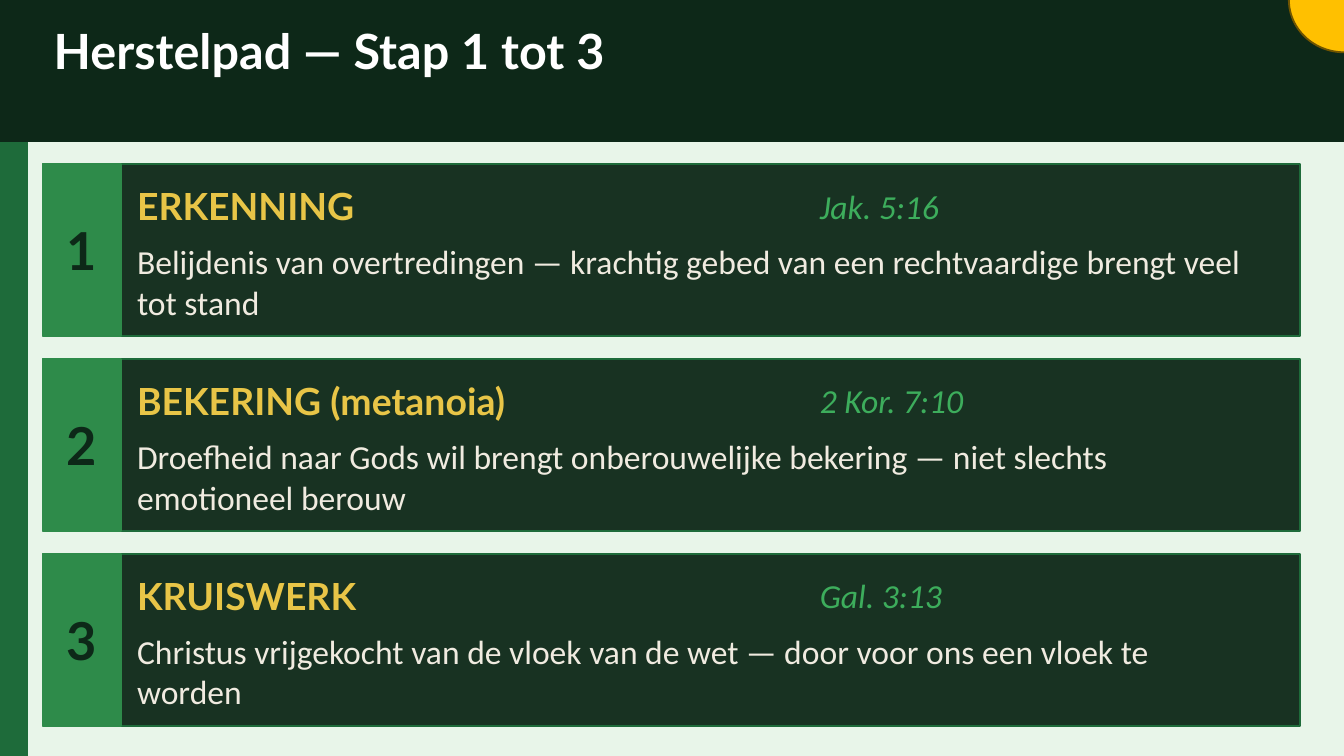
"""Build the slide with steps 1 to 3 of the recovery path."""
from dataclasses import dataclass

from lxml import etree
from pptx import Presentation
from pptx.dml.color import RGBColor
from pptx.enum.shapes import MSO_SHAPE
from pptx.enum.text import MSO_ANCHOR, PP_ALIGN
from pptx.oxml.ns import qn
from pptx.shapes.autoshape import Shape
from pptx.slide import Slide
from pptx.util import Inches, Pt

RECTANGLE = MSO_SHAPE.RECTANGLE
OVAL = MSO_SHAPE.OVAL
MIDDLE = MSO_ANCHOR.MIDDLE
LEFT = PP_ALIGN.LEFT
CENTER = PP_ALIGN.CENTER

MINT = RGBColor(0xE8, 0xF5, 0xE9)
FOREST = RGBColor(0x0D, 0x28, 0x18)
GREEN = RGBColor(0x1E, 0x6B, 0x3A)
BADGE_GREEN = RGBColor(0x2E, 0x8B, 0x4A)
VERSE_GREEN = RGBColor(0x3D, 0xAD, 0x5C)
GOLD = RGBColor(0xE8, 0xC5, 0x47)
CREAM = RGBColor(0xF0, 0xEB, 0xE0)
WHITE = RGBColor(0xFF, 0xFF, 0xFF)
AMBER = RGBColor(0xFF, 0xC0, 0x00)
BROWN = RGBColor(0x70, 0x54, 0x00)

SLIDE_WIDTH = 10
SLIDE_HEIGHT = SLIDE_WIDTH * 9 / 16
CARD_LEFT = 0.32
CARD_TOP = 1.22
CARD_WIDTH = 9.35
CARD_HEIGHT = 1.28
CARD_PITCH = 1.45
BADGE_WIDTH = 0.58
TEXT_LEFT = 1.02


@dataclass(frozen=True)
class Box:
    """Position and size in inches."""

    left: float
    top: float
    width: float
    height: float


@dataclass(frozen=True)
class TextStyle:
    """Look of a single-run text."""

    font: str
    size: int
    color: RGBColor
    bold: bool = False
    italic: bool = False
    alignment: PP_ALIGN = LEFT


@dataclass(frozen=True)
class Step:
    """One step of the recovery path."""

    title: str
    verse: str
    description: str


TITLE_STYLE = TextStyle("Lato", 26, WHITE, bold=True)
NUMBER_STYLE = TextStyle("Lato", 28, FOREST, bold=True, alignment=CENTER)
STEP_STYLE = TextStyle("Lato", 20, GOLD, bold=True)
VERSE_STYLE = TextStyle("Calibri", 18, VERSE_GREEN, italic=True)
DESCRIPTION_STYLE = TextStyle("Calibri", 18, CREAM)

STEPS = (
    Step(
        "ERKENNING",
        "Jak. 5:16",
        "Belijdenis van overtredingen — krachtig gebed van een rechtvaardige brengt veel tot stand",
    ),
    Step(
        "BEKERING (metanoia)",
        "2 Kor. 7:10",
        "Droefheid naar Gods wil brengt onberouwelijke bekering — niet slechts emotioneel berouw",
    ),
    Step(
        "KRUISWERK",
        "Gal. 3:13",
        "Christus vrijgekocht van de vloek van de wet — door voor ons een vloek te worden",
    ),
)


def add_panel(
    slide: Slide, box: Box, fill: RGBColor, line: RGBColor, kind: MSO_SHAPE = RECTANGLE
) -> Shape:
    """Draw a filled shape with a thin outline."""
    shape = slide.shapes.add_shape(
        kind, Inches(box.left), Inches(box.top), Inches(box.width), Inches(box.height)
    )
    shape.shadow.inherit = False
    shape.fill.solid()
    shape.fill.fore_color.rgb = fill
    shape.line.color.rgb = line
    shape.line.width = Pt(1)
    return shape


def set_opacity(shape: Shape, percent: int) -> None:
    """Make the solid fill of a shape partly transparent."""
    color = shape.fill._xPr.find(qn("a:solidFill")).find(qn("a:srgbClr"))
    etree.SubElement(color, qn("a:alpha")).set("val", str(percent * 1000))


def add_text(slide: Slide, box: Box, text: str, style: TextStyle) -> None:
    """Place a text without margins, centred vertically in its box."""
    shape = slide.shapes.add_textbox(
        Inches(box.left), Inches(box.top), Inches(box.width), Inches(box.height)
    )
    frame = shape.text_frame
    frame.word_wrap = True
    frame.vertical_anchor = MIDDLE
    frame.margin_left = frame.margin_right = Inches(0)
    frame.margin_top = frame.margin_bottom = Inches(0)
    paragraph = frame.paragraphs[0]
    paragraph.alignment = style.alignment
    run = paragraph.add_run()
    run.text = text
    run.font.name = style.font
    run.font.size = Pt(style.size)
    run.font.color.rgb = style.color
    run.font.bold = style.bold
    run.font.italic = style.italic


def add_step(slide: Slide, index: int, step: Step) -> None:
    """Draw one numbered step card."""
    top = CARD_TOP + index * CARD_PITCH
    card = add_panel(slide, Box(CARD_LEFT, top, CARD_WIDTH, CARD_HEIGHT), FOREST, GREEN)
    set_opacity(card, 95)
    badge = Box(CARD_LEFT, top, BADGE_WIDTH, CARD_HEIGHT)
    add_panel(slide, badge, BADGE_GREEN, BADGE_GREEN)
    add_text(slide, badge, str(index + 1), NUMBER_STYLE)
    add_text(slide, Box(TEXT_LEFT, top + 0.1, 5, 0.42), step.title, STEP_STYLE)
    add_text(slide, Box(6.1, top + 0.1, 2.8, 0.42), step.verse, VERSE_STYLE)
    add_text(
        slide, Box(TEXT_LEFT, top + 0.55, 8.35, 0.65), step.description, DESCRIPTION_STYLE
    )


def main() -> None:
    """Build and save the presentation."""
    presentation = Presentation()
    presentation.slide_width = Inches(SLIDE_WIDTH)
    presentation.slide_height = Inches(SLIDE_HEIGHT)
    slide = presentation.slides.add_slide(presentation.slide_layouts[6])
    slide.background.fill.solid()
    slide.background.fill.fore_color.rgb = MINT

    add_panel(slide, Box(0, 0, 0.2, SLIDE_HEIGHT), GREEN, GREEN)
    add_panel(slide, Box(0, 0, SLIDE_WIDTH, 1.05), FOREST, FOREST)
    add_text(slide, Box(0.4, 0.08, 9.2, 0.58), "Herstelpad — Stap 1 tot 3", TITLE_STYLE)
    for index, step in enumerate(STEPS):
        add_step(slide, index, step)
    add_panel(slide, Box(9.59, -0.39, 0.83, 0.78), AMBER, BROWN, OVAL)

    presentation.save("out.pptx")


if __name__ == "__main__":
    main()
